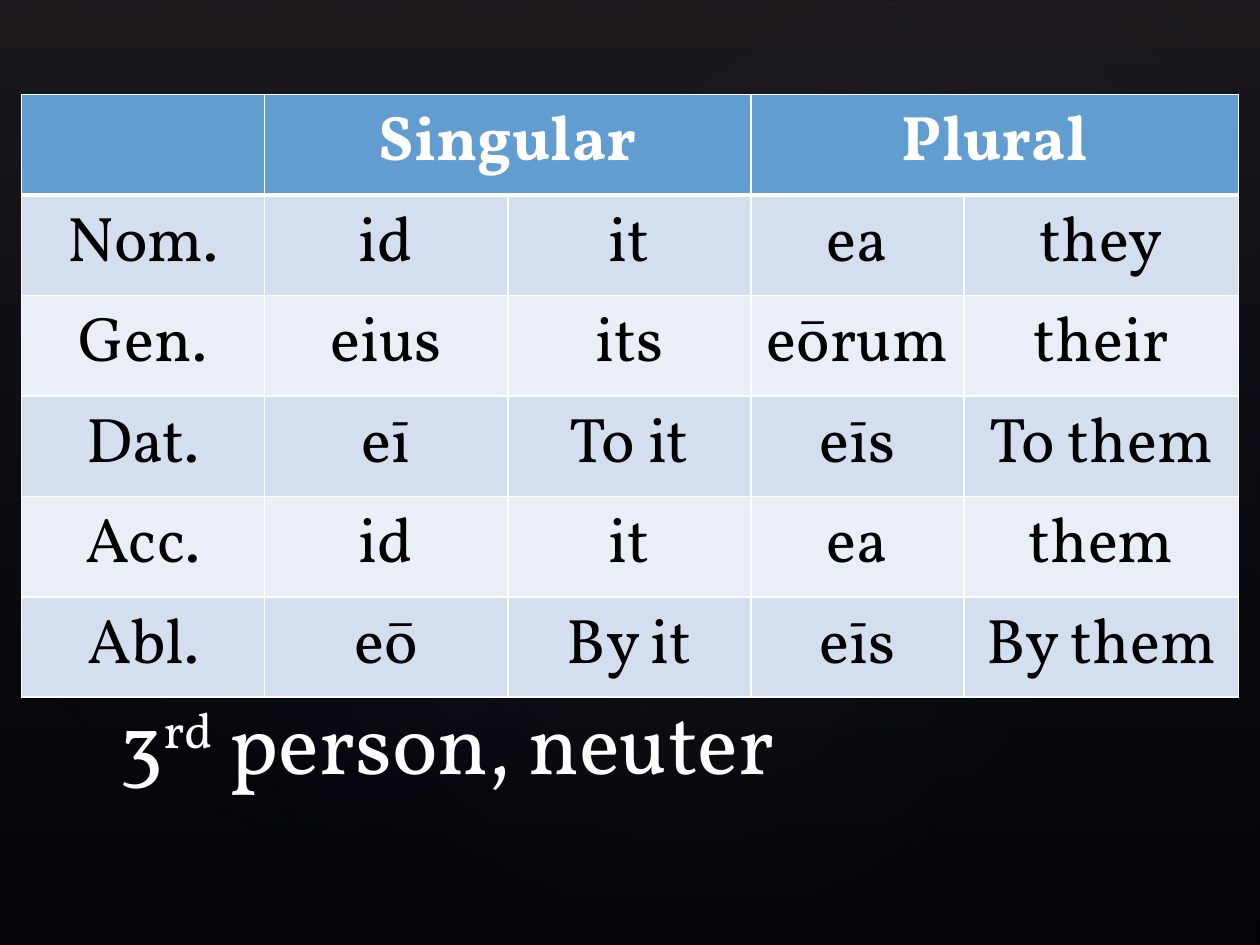
from lxml.etree import SubElement
from pptx import Presentation
from pptx.dml.color import RGBColor
from pptx.enum.shapes import MSO_SHAPE
from pptx.enum.text import MSO_ANCHOR, MSO_AUTO_SIZE, PP_ALIGN
from pptx.oxml import parse_xml
from pptx.oxml.ns import nsdecls, qn
from pptx.util import Inches, Pt

FONT = "Vollkorn"
COLORS = {
    "background": "000000",
    "haze": "504652",
    "navy": "242852",
    "glow": "C4BCC6",
    "header": "629DD1",
    "odd_row": "D3DFEE",
    "even_row": "EAEFF7",
    "white": "FFFFFF",
    "black": "000000",
}
LINEAR = '<a:lin ang="5400000" scaled="0"/>'
RADIAL = ('<a:path path="circle">'
          '<a:fillToRect l="50000" t="50000" r="50000" b="50000"/></a:path>')
# left, top, width, height, rotation, opacity of the centre in percent
GLOWS = [
    (1.5, 1.14, 7.92, 6.24, 328.7, 7),
    (-0.3, 1.28, 6.06, 4.9, 294.3, 8),
    (3.58, 0.13, 7.09, 5.2, 328.7, 8),
]
COLUMN_WIDTHS = [1.93, 1.93, 1.93, 1.69, 2.18]
ROW_HEIGHT = 0.79
DECLENSION = [
    ["", "Singular", "", "Plural", ""],
    ["Nom.", "id", "it", "ea", "they"],
    ["Gen.", "eius", "its", "eōrum", "their"],
    ["Dat.", "eī", "To it", "eīs", "To them"],
    ["Acc.", "id", "it", "ea", "them"],
    ["Abl.", "eō", "By it", "eīs", "By them"],
]


def rgb(name):
    return RGBColor.from_string(COLORS[name])


def add_gradient_shape(slide, kind, box, stops, direction, rotation=0):
    """Stops are (position, colour name, opacity), numbers in percent."""
    shape = slide.shapes.add_shape(kind, *map(Inches, box))
    shape.rotation = rotation
    shape.shadow.inherit = False
    shape.line.fill.background()
    stop_xml = "".join(
        f'<a:gs pos="{position * 1000}"><a:srgbClr val="{COLORS[color]}">'
        f'<a:alpha val="{opacity * 1000}"/></a:srgbClr></a:gs>'
        for position, color, opacity in stops)
    gradient = parse_xml(f'<a:gradFill {nsdecls("a")} rotWithShape="1">'
                         f'<a:gsLst>{stop_xml}</a:gsLst>{direction}</a:gradFill>')
    shape._element.spPr.find(qn("a:prstGeom")).addnext(gradient)


def add_backdrop(slide):
    slide.background.fill.solid()
    slide.background.fill.fore_color.rgb = rgb("background")
    add_gradient_shape(slide, MSO_SHAPE.RECTANGLE, (0, 0, 10, 7.5),
                       [(0, "haze", 36), (100, "navy", 10)], LINEAR)
    for *box, rotation, opacity in GLOWS:
        add_gradient_shape(slide, MSO_SHAPE.OVAL, box,
                           [(0, "glow", opacity), (58, "navy", 0)], RADIAL, rotation)


def set_borders(cell, bottom_width, top_width):
    properties = cell._tc.get_or_add_tcPr()
    widths = {"a:lnL": 1, "a:lnR": 1, "a:lnT": top_width, "a:lnB": bottom_width}
    for index, (tag, width) in enumerate(widths.items()):
        line = parse_xml(f'<{tag} {nsdecls("a")} w="{Pt(width)}"/>')
        fill = SubElement(line, qn("a:solidFill"))
        SubElement(fill, qn("a:srgbClr")).set("val", COLORS["white"])
        properties.insert(index, line)


def format_cell(cell, text, row_index):
    is_header = row_index == 0
    row_color = "odd_row" if row_index % 2 else "even_row"
    cell.fill.solid()
    cell.fill.fore_color.rgb = rgb("header" if is_header else row_color)
    set_borders(cell, 3 if is_header else 1, 3 if row_index == 1 else 1)
    cell.text = text
    paragraph = cell.text_frame.paragraphs[0]
    paragraph.alignment = PP_ALIGN.CENTER
    paragraph.font.name = FONT
    paragraph.font.size = Pt(36)
    paragraph.font.bold = is_header
    paragraph.font.color.rgb = rgb("white" if is_header else "black")


def add_declension_table(slide):
    row_count = len(DECLENSION)
    table = slide.shapes.add_table(
        row_count, len(COLUMN_WIDTHS), Inches(0.17), Inches(0.75),
        Inches(sum(COLUMN_WIDTHS)), Inches(ROW_HEIGHT * row_count)).table
    for column, width in zip(table.columns, COLUMN_WIDTHS):
        column.width = Inches(width)
    for row_index, row in enumerate(DECLENSION):
        for column_index, text in enumerate(row):
            format_cell(table.cell(row_index, column_index), text, row_index)
    for first in (1, 3):
        table.cell(0, first).merge(table.cell(0, first + 1))


def set_title(slide):
    title = slide.shapes.title
    title.left, title.top, title.width, title.height = map(Inches, (0.85, 5.33, 8.25, 1))
    frame = title.text_frame
    frame.auto_size = MSO_AUTO_SIZE.NONE
    frame.vertical_anchor = MSO_ANCHOR.BOTTOM
    paragraph = frame.paragraphs[0]
    paragraph.alignment = PP_ALIGN.LEFT
    paragraph.font.name = FONT
    paragraph.font.size = Pt(49)
    paragraph.font.color.rgb = rgb("white")
    for text, baseline in (("3", 0), ("rd", 30), (" person, neuter", 0)):
        run = paragraph.add_run()
        run.text = text
        if baseline:
            run.font._element.set("baseline", str(baseline * 1000))
    slide.shapes._spTree.append(title._element)  # bring to the front


def main():
    presentation = Presentation()
    presentation.slide_width, presentation.slide_height = Inches(10), Inches(7.5)
    slide = presentation.slides.add_slide(presentation.slide_layouts.get_by_name("Title Only"))
    add_backdrop(slide)
    add_declension_table(slide)
    set_title(slide)
    presentation.save("out.pptx")


if __name__ == "__main__":
    main()
